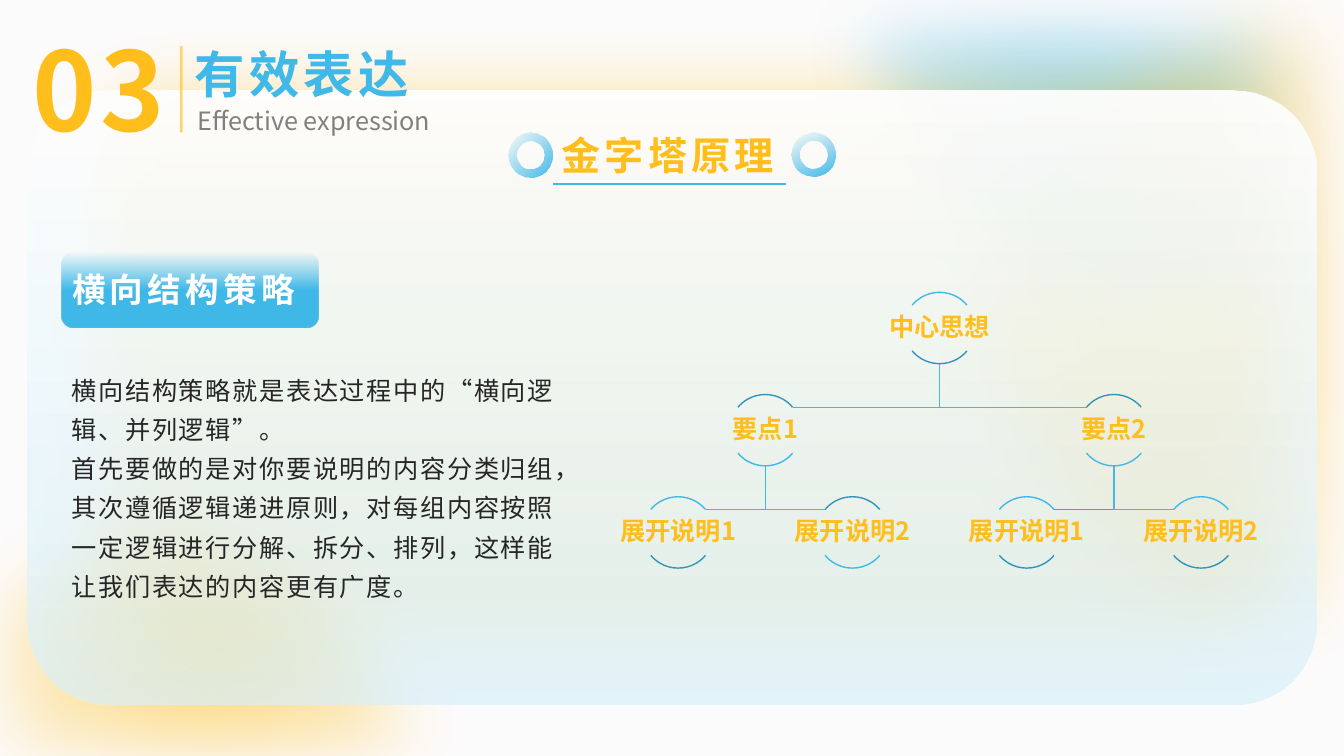
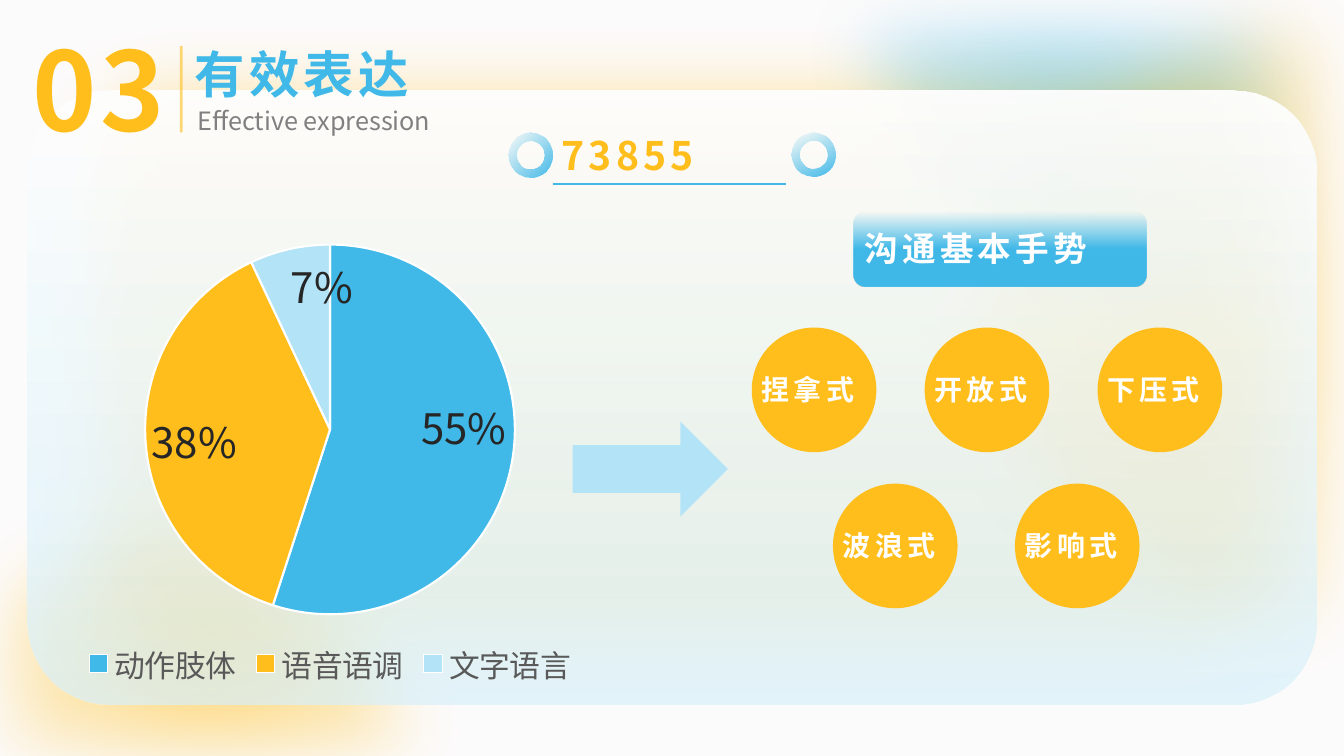
import dataclasses
import math

import lxml.etree
import pptx
import pptx.chart.data
import pptx.dml.color
import pptx.enum.chart
import pptx.enum.shapes
import pptx.enum.text
import pptx.oxml.ns
import pptx.util

Pt = pptx.util.Pt
qn = pptx.oxml.ns.qn
RGB = pptx.dml.color.RGBColor.from_string
SHAPE = pptx.enum.shapes.MSO_SHAPE
STRAIGHT = pptx.enum.shapes.MSO_CONNECTOR.STRAIGHT
ALIGN = pptx.enum.text.PP_ALIGN


@dataclasses.dataclass(frozen=True)
class Theme:
    font: str = "Noto Sans CJK SC"
    page: str = "FCFBFB"
    white: str = "FFFFFF"
    yellow: str = "FFBE1C"
    blue: str = "40B9E9"
    mid_blue: str = "3AA8D3"
    deep_blue: str = "3394BB"
    pale_blue: str = "B3E3F6"
    card_blue: str = "D9F1FB"
    ink: str = "262626"
    grey: str = "808080"
    legend: str = "595959"
    number: float = 78
    heading: float = 36
    title: float = 28
    button: float = 24
    legend_size: float = 22
    circle: float = 20
    body: float = 18
    label: float = 30


T = Theme()


def paint(sp, fill=None, line=None, angle=None):
    sp.shadow.inherit = False
    if fill is None:
        sp.fill.background()
    elif isinstance(fill, str):
        sp.fill.solid()
        sp.fill.fore_color.rgb = RGB(fill)
    else:
        sp.fill.gradient()
        for stop, (position, color, opacity) in zip(sp.fill.gradient_stops, fill):
            stop.position = position / 100
            stop.color.rgb = RGB(color)
            clr = stop._gs.find(qn("a:srgbClr"))
            lxml.etree.SubElement(clr, qn("a:alpha"), val=str(opacity * 1000))
        if angle is None:
            lin = sp._element.spPr.find(".//" + qn("a:lin"))
            grad = lin.getparent()
            grad.remove(lin)
            radial = lxml.etree.SubElement(grad, qn("a:path"), path="circle")
            lxml.etree.SubElement(radial, qn("a:fillToRect"),
                                  l="50000", t="50000", r="50000", b="50000")
        else:
            sp.fill.gradient_angle = 360 - angle
    if line:
        sp.line.color.rgb = RGB(line)
        sp.line.width = Pt(1)
    else:
        sp.line.fill.background()
    return sp._element.spPr.find(qn("a:effectLst"))


def add_text(shapes, box, lines, size, color, bold=True, spacing=3.0,
             align=ALIGN.JUSTIFY, leading=None, inset=None):
    tf = shapes.add_textbox(*map(Pt, box)).text_frame
    tf.word_wrap = True
    if inset is not None:
        tf.margin_left = tf.margin_right = tf.margin_top = tf.margin_bottom = Pt(inset)
        tf.vertical_anchor = pptx.enum.text.MSO_ANCHOR.MIDDLE
    for i, line in enumerate(lines):
        p = tf.paragraphs[0] if i == 0 else tf.add_paragraph()
        p.alignment = align
        p.line_spacing = leading
        r = p.add_run()
        r.text = line
        r.font.size = Pt(size)
        r.font.bold = bold
        r.font.name = T.font
        r.font.color.rgb = RGB(color)
        rPr = r.font._element
        rPr.set("spc", str(round(spacing * 100)))
        lxml.etree.SubElement(rPr, qn("a:ea"), typeface=T.font)


prs = pptx.Presentation()
prs.slide_width, prs.slide_height = Pt(960), Pt(540)

blobs = [
    (T.yellow, (121, 316), [
        (247.5, 316, 351.5, 413, 351.5, 533), (351.5, 548, 349, 562.5, 346.5, 577),
        (343.5, 586), (-48, 586), (-48, 389.5), (-51, 389.5), (-42.5, 379.5),
        (-0.5, 340.5, 57, 316, 121, 316)]),
    (T.yellow, (913.5, -36.5), [
        (960, -36.5, 1004, -25, 1042, -4.5), (1049, 0), (992, 0), (992, 492), (980.5, 494.5),
        (959, 500.5, 936.5, 503.5, 913.5, 503.5), (764, 503.5, 643, 382.5, 643, 233.5),
        (643, 84.5, 764, -36.5, 913.5, -36.5)]),
    (T.blue, (556, -29.5), [
        (960, -29.5), (960, 234), (952.5, 238.5), (913.5, 258.5, 870.5, 270, 823.5, 270),
        (674.5, 270, 553.5, 152, 553.5, 6.5), (553.5, -3, 553.5, -11.5, 554.5, -21),
        (556, -29.5)]),
]

pages = [
    ("金字塔原理", "横向结构策略", (44, 180.5, 183.5)),
    ("73855", "沟通基本手势", (610, 151, 209)),
]
slides = []
for title, button, (button_x, button_y, button_w) in pages:
    s = prs.slides.add_slide(prs.slide_layouts[6])
    slides.append(s)
    s.background.fill.solid()
    s.background.fill.fore_color.rgb = RGB(T.page)

    for color, start, segments in blobs:
        fb = s.shapes.build_freeform(*map(Pt, start))
        for segment in segments:
            values = [Pt(v) for v in segment]
            fb.add_line_segments(list(zip(values[::2], values[1::2])), close=False)
        blob = fb.convert_to_shape()
        outline = blob._element.spPr.find(".//" + qn("a:path"))
        steps = iter(outline.findall(qn("a:lnTo")))
        for segment in segments:
            step = next(steps)
            if len(segment) == 6:
                curve = lxml.etree.Element(qn("a:cubicBezTo"))
                outline.replace(step, curve)
                for point in (step, next(steps), next(steps)):
                    curve.append(point[0])
                    if point.getparent() is not None:
                        outline.remove(point)
        lxml.etree.SubElement(outline, qn("a:close"))
        effects = paint(blob, [(0, color, 60), (100, color, 0)])
        lxml.etree.SubElement(effects, qn("a:softEdge"), rad=str(Pt(50)))

    card = s.shapes.add_shape(SHAPE.ROUNDED_RECTANGLE, Pt(19.5), Pt(65), Pt(921), Pt(438.5))
    card.adjustments[0] = 0.134
    effects = paint(card, [(0, T.white, 95), (100, T.card_blue, 70)], angle=90)
    shadow = lxml.etree.SubElement(effects, qn("a:outerShdw"), blurRad=str(Pt(50)),
                                   dist=str(Pt(4)), dir="0", sx="90000", sy="90000",
                                   algn="t", rotWithShape="0")
    clr = lxml.etree.SubElement(shadow, qn("a:srgbClr"), val=T.yellow)
    lxml.etree.SubElement(clr, qn("a:alpha"), val="40000")

    add_text(s.shapes, (132, 27.5, 181.5, 51), ["有效表达"], T.heading, T.blue)
    add_text(s.shapes, (134, 72, 193, 29), ["Effective expression"], T.body, T.grey,
             bold=False, spacing=0)
    add_text(s.shapes, (6.5, 12.5, 128, 101.5), ["03"], T.number, T.yellow, align=ALIGN.CENTER)
    add_text(s.shapes, (394, 90, 173.5, 41), [title], T.title, T.yellow)

    for x, y, rotation in [(363, 95, 0), (565.5, 94.5, 17.1)]:
        ring = s.shapes.add_shape(SHAPE.DONUT, Pt(x), Pt(y), Pt(31.5), Pt(31.5))
        ring.adjustments[0] = 0.194
        ring.rotation = rotation
        paint(ring, [(0, T.blue, 0), (100, T.blue, 100)], angle=45)

    for x1, y1, x2, y2, color, width, opacity in [
        (129.5, 33, 129.5, 94.5, T.yellow, 2, 60),
        (395, 131.3, 561.5, 131.3, T.blue, 1.5, 100),
    ]:
        rule = s.shapes.add_connector(STRAIGHT, Pt(x1), Pt(y1), Pt(x2), Pt(y2))
        rule.line.color.rgb = RGB(color)
        rule.line.width = Pt(width)
        spPr = rule._element.spPr
        clr = spPr.find(".//" + qn("a:srgbClr"))
        lxml.etree.SubElement(clr, qn("a:alpha"), val=str(opacity * 1000))
        lxml.etree.SubElement(spPr, qn("a:effectLst"))

    plate = s.shapes.add_shape(SHAPE.ROUNDED_RECTANGLE, Pt(button_x), Pt(button_y),
                               Pt(button_w), Pt(53.5))
    paint(plate, [(50, T.blue, 100), (100, T.blue, 0)], angle=270)
    add_text(s.shapes, (button_x + 0.5, button_y + 8.3, button_w, 36), [button],
             T.button, T.white)

pyramid, gestures = slides

add_text(pyramid.shapes, (44, 257.8, 361, 175), [
    "横向结构策略就是表达过程中的“横向逻辑、并列逻辑”。",
    "首先要做的是对你要说明的内容分类归组，其次遵循逻辑递进原则，对每组内容按照一定逻辑进行分解、拆分、排列，这样能让我们表达的内容更有广度。",
], T.body, T.ink, bold=False, spacing=1.2, align=ALIGN.LEFT, leading=1.3)

tree = pyramid.shapes.add_group_shape()
leaf_x, leaf_step = 484.4, 124.5
tree_y, level_step, arc_size = 208.8, 73, 51
radius = arc_size / 2
tip_x = radius * math.cos(math.radians(40))
tip_y = radius * (1 - math.sin(math.radians(40)))
nodes = [
    ("中心思想", 1.5, 0, None, T.blue, T.deep_blue, None),
    ("要点1", 0.5, 1, 1.5, T.deep_blue, T.blue, T.blue),
    ("要点2", 2.5, 1, 1.5, T.deep_blue, T.blue, T.blue),
    ("展开说明1", 0, 2, 0.5, T.blue, T.deep_blue, T.blue),
    ("展开说明2", 1, 2, 0.5, T.deep_blue, T.blue, T.blue),
    ("展开说明1", 2, 2, 2.5, T.blue, T.deep_blue, T.mid_blue),
    ("展开说明2", 3, 2, 2.5, T.blue, T.deep_blue, T.blue),
]
for label, column, level, parent, top_color, bottom_color, link_color in nodes:
    cx = leaf_x + column * leaf_step
    y = tree_y + level * level_step
    if parent is not None:
        parent_x = leaf_x + parent * leaf_step
        end_x = cx + math.copysign(tip_x, parent_x - cx)
        bend_y = Pt(y + tip_y)
        fb = tree.shapes.build_freeform(Pt(parent_x), Pt(y - level_step + arc_size))
        fb.add_line_segments([(Pt(parent_x), bend_y), (Pt(end_x), bend_y)], close=False)
        paint(fb.convert_to_shape(), line=link_color)
    for start, end, color in [(132, 192, top_color), (24, 84, bottom_color)]:
        arc = tree.shapes.add_shape(SHAPE.ARC, Pt(cx - radius), Pt(y), Pt(arc_size), Pt(arc_size))
        arc.adjustments[0], arc.adjustments[1] = start, end
        paint(arc, line=color)
    add_text(tree.shapes, (cx - 51.5, y + 9, 103, 33), [label], T.body, T.yellow,
             spacing=0, align=ALIGN.CENTER, leading=0.9, inset=0.9)

data = pptx.chart.data.CategoryChartData(number_format="0%")
data.categories = ["动作肢体", "语音语调", "文字语言"]
data.add_series("Series 1", [0.55, 0.38, 0.07])
chart = gestures.shapes.add_chart(pptx.enum.chart.XL_CHART_TYPE.PIE, Pt(-46), Pt(150.3),
                                  Pt(563.5), Pt(344), data).chart
chart.has_title = False
chart.font.name = T.font
chart.font.size = Pt(10)
chart.has_legend = True
chart.legend.position = pptx.enum.chart.XL_LEGEND_POSITION.BOTTOM
chart.legend.include_in_layout = False
plot = chart.plots[0]
plot.vary_by_categories = True
plot.has_data_labels = True
labels = plot.data_labels
labels.show_value = True
labels.show_percentage = False
labels.number_format = "0%"
labels.number_format_is_linked = False
labels.position = pptx.enum.chart.XL_LABEL_POSITION.INSIDE_END
for font, size, color in [(chart.legend.font, T.legend_size, T.legend),
                          (labels.font, T.label, T.ink)]:
    font.name = T.font
    font.size = Pt(size)
    font.color.rgb = RGB(color)
for rPr in chart._chartSpace.iter(qn("a:defRPr")):
    lxml.etree.SubElement(rPr, qn("a:ea"), typeface=T.font)
for i, color in enumerate([T.blue, T.yellow, T.pale_blue]):
    fmt = plot.series[0].points[i].format
    fmt.fill.solid()
    fmt.fill.fore_color.rgb = RGB(color)
    fmt.line.color.rgb = RGB(T.white)
    fmt.line.width = Pt(1.5)

arrow = gestures.shapes.add_shape(SHAPE.RIGHT_ARROW, Pt(409), Pt(301), Pt(111), Pt(68))
paint(arrow, T.pale_blue)

circle_size = 89
for left, top, step, names in [
    (537, 234, 123.5, ["捏拿式", "开放式", "下压式"]),
    (595, 345.5, 130, ["波浪式", "影响式"]),
]:
    for i, name in enumerate(names):
        x = left + i * step
        disc = gestures.shapes.add_shape(SHAPE.OVAL, Pt(x), Pt(top),
                                         Pt(circle_size), Pt(circle_size))
        paint(disc, T.yellow)
        add_text(gestures.shapes, (x, top + 28.7, circle_size, 31.5), [name], T.circle, T.white)

prs.save("out.pptx")
